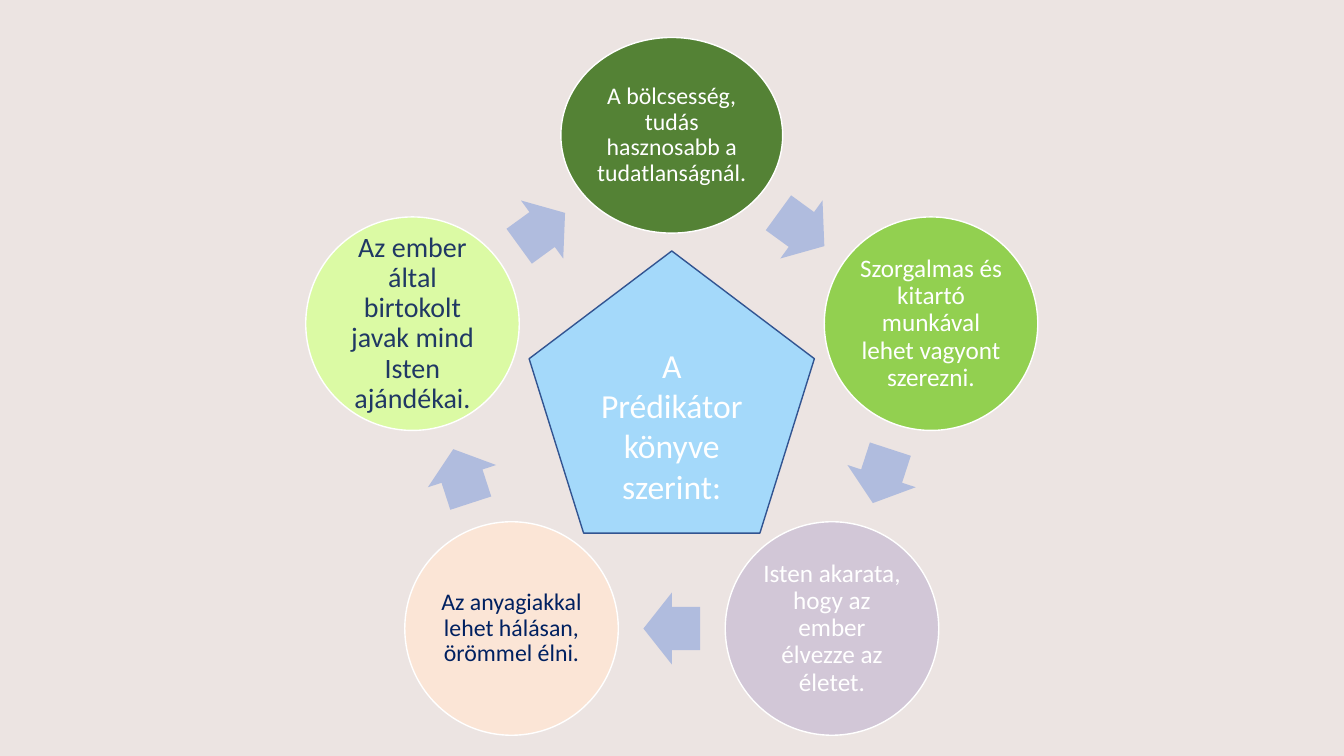
"""Build a slide with a five-step cycle of teachings around a pentagon."""
from math import cos, pi, radians, sin

from pptx import Presentation
from pptx.dml.color import RGBColor
from pptx.enum.shapes import MSO_SHAPE
from pptx.enum.text import MSO_ANCHOR, PP_ALIGN
from pptx.util import Cm, Pt

CENTER_X, CENTER_Y, RADIUS = 16.93, 10.28, 6.87
TEACHINGS = [
    ("A bölcsesség, tudás hasznosabb a tudatlanságnál.", "548235", "FFFFFF", 17, 5.59, 4.93),
    ("Szorgalmas és kitartó munkával lehet vagyont szerezni.", "92D050", "FFFFFF", 18, 5.38, 5.38),
    ("Isten akarata, hogy az ember élvezze az életet.", "D2C7D7", "FFFFFF", 18, 5.38, 5.38),
    ("Az anyagiakkal lehet hálásan, örömmel élni.", "FBE5D6", "002060", 17, 5.38, 5.38),
    ("Az ember által birtokolt javak mind Isten ajándékai.", "DBFAA4", "203864", 20, 5.38, 5.38),
]


def paint(color_format, hex_color):
    color_format.rgb = RGBColor.from_string(hex_color)


def add_figure(slide, kind, x, y, width, height, fill, outline=None):
    figure = slide.shapes.add_shape(
        kind, Cm(x - width / 2), Cm(y - height / 2), Cm(width), Cm(height))
    figure.shadow.inherit = False
    figure.fill.solid()
    paint(figure.fill.fore_color, fill)
    if outline:
        paint(figure.line.color, outline)
        figure.line.width = Pt(1)
    else:
        figure.line.fill.background()
    return figure


def write(figure, text, *, size, color, spacing=1.0, inset=0.25):
    frame = figure.text_frame
    frame.word_wrap = True
    frame.vertical_anchor = MSO_ANCHOR.MIDDLE
    frame.margin_left = frame.margin_right = Cm(inset)
    frame.margin_top = frame.margin_bottom = Cm(min(inset, 0.13))
    paragraph = frame.paragraphs[0]
    paragraph.alignment = PP_ALIGN.CENTER
    paragraph.line_spacing = spacing
    run = paragraph.add_run()
    run.text = text
    run.font.name = "Calibri"
    run.font.size = Pt(size)
    paint(run.font.color, color)


def on_ring(angle, radius):
    return (CENTER_X + radius * sin(radians(angle)),
            CENTER_Y - radius * cos(radians(angle)))


def add_teaching(slide, angle, text, fill, color, size, width, height):
    circle = add_figure(slide, MSO_SHAPE.OVAL, *on_ring(angle, RADIUS),
                        width, height, fill, "FFFFFF")
    write(circle, text, size=size, color=color, spacing=0.9, inset=0.06)


def add_arrow(slide, angle):
    arrow = add_figure(slide, MSO_SHAPE.RIGHT_ARROW,
                       *on_ring(angle, RADIUS * cos(pi / len(TEACHINGS))),
                       1.43, 1.81, "B0BCDE")
    arrow.adjustments[0] = 0.6
    arrow.adjustments[1] = 0.5
    arrow.rotation = angle


def main():
    deck = Presentation()
    deck.slide_width, deck.slide_height = Cm(33.87), Cm(19.05)
    slide = deck.slides.add_slide(deck.slide_layouts[6])
    slide.background.fill.solid()
    paint(slide.background.fill.fore_color, "ECE4E2")

    step = 360 / len(TEACHINGS)
    for index, teaching in enumerate(TEACHINGS):
        add_teaching(slide, index * step, *teaching)
        add_arrow(slide, (index + 0.5) * step)

    pentagon = add_figure(slide, MSO_SHAPE.REGULAR_PENTAGON, CENTER_X, 9.88,
                          7.19, 7.11, "A4D9FA", "325491")
    write(pentagon, "A Prédikátor könyve szerint:", size=24, color="FFFFFF")
    deck.save("out.pptx")


if __name__ == "__main__":
    main()
